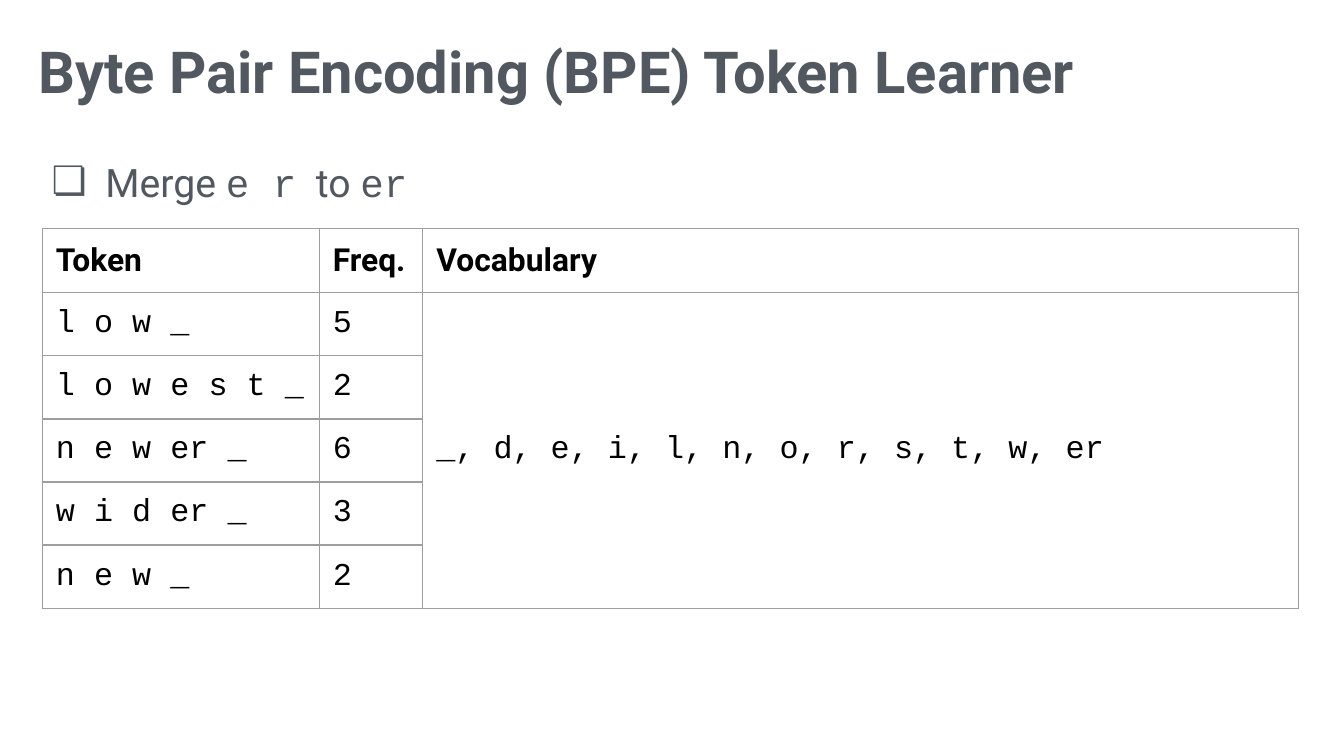
"""Build the Byte Pair Encoding merge slide."""
from pptx import Presentation, util as u
from pptx.dml.color import RGBColor
from pptx.enum import text
from pptx.oxml import parse_xml
from pptx.oxml.ns import nsdecls

SLATE = RGBColor(0x52, 0x58, 0x60)
BLACK = RGBColor(0, 0, 0)
GREY = RGBColor(0x9E, 0x9E, 0x9E)
SANS, MONO = "Roboto", "Courier New"


def add_span(para, words, color, **font):
    span = para.add_run()
    span.text = words
    span.font.color.rgb = color
    for name, value in font.items():
        setattr(span.font, name, value)


def format_object(target, values):
    for name, value in values.items():
        setattr(target, name, value)


deck = Presentation()
deck.slide_width, deck.slide_height = u.Pt(720), u.Pt(405)
page = deck.slides.add_slide(deck.slide_layouts[5])

sides = ("left", "top", "right", "bottom")
frame_format = {f"margin_{side}": u.Pt(4.5) for side in sides}
frame_format |= {"word_wrap": True, "vertical_anchor": text.MSO_ANCHOR.TOP,
                 "auto_size": text.MSO_AUTO_SIZE.NONE}

title = page.shapes.title
format_object(title, {"left": u.Pt(16), "top": u.Pt(14.4),
                      "width": u.Pt(686), "height": u.Pt(35.3)})
format_object(title.text_frame, frame_format)
para = title.text_frame.paragraphs[0]
para.alignment = text.PP_ALIGN.LEFT
add_span(para, "Byte Pair Encoding (BPE) Token Learner", SLATE,
         name=SANS, size=u.Pt(31), bold=True)

body = page.shapes.add_textbox(u.Pt(16), u.Pt(76.3), u.Pt(673), u.Pt(283))
format_object(body.text_frame, frame_format)
para = body.text_frame.paragraphs[0]
para.line_spacing = 1.15
props = para._p.get_or_add_pPr()
props.set("marL", str(u.Pt(36)))
props.set("indent", str(u.Pt(-28.8)))
for element in (f'<a:buClr {nsdecls("a")}><a:srgbClr val="{SLATE}"/></a:buClr>',
                f'<a:buFont {nsdecls("a")} typeface="{SANS}"/>',
                f'<a:buChar {nsdecls("a")} char="❏"/>'):
    props.append(parse_xml(element))
for words, font_name in (("Merge ", SANS), ("e r", MONO), ("  to ", SANS), ("er", MONO)):
    add_span(para, words, SLATE, name=font_name, size=u.Pt(21))

rows = [
    ("Token", "Freq.", "Vocabulary"),
    ("l o w _", "5", "_, d, e, i, l, n, o, r, s, t, w, er"),
    ("l o w e s t _", "2", ""),
    ("n e w er _", "6", ""),
    ("w i d er _", "3", ""),
    ("n e w _", "2", ""),
]
widths = (148.3, 55.5, 469.2)
row_height = 33.8
table = page.shapes.add_table(len(rows), len(widths), u.Pt(22.8), u.Pt(122.4),
                              u.Pt(sum(widths)), u.Pt(row_height * len(rows))).table
format_object(table, {"first_row": False, "horz_banding": False})
for column, width in zip(table.columns, widths):
    column.width = u.Pt(width)
cell_format = {f"margin_{side}": u.Pt(7.2) for side in sides}
cell_format["vertical_anchor"] = text.MSO_ANCHOR.MIDDLE

for r, row in enumerate(rows):
    table.rows[r].height = u.Pt(row_height)
    for c, words in enumerate(row):
        cell = table.cell(r, c)
        format_object(cell, cell_format)
        props = cell._tc.get_or_add_tcPr()
        for edge in ("lnL", "lnR", "lnT", "lnB"):
            props.append(parse_xml(
                f'<a:{edge} {nsdecls("a")} w="{u.Pt(0.75)}"><a:solidFill>'
                f'<a:srgbClr val="{GREY}"/></a:solidFill></a:{edge}>'))
        cell.fill.background()
        if words:
            add_span(cell.text_frame.paragraphs[0], words, BLACK, size=u.Pt(17),
                     name=MONO if r else SANS, bold=r == 0)
table.cell(1, 2).merge(table.cell(5, 2))

deck.save("out.pptx")
